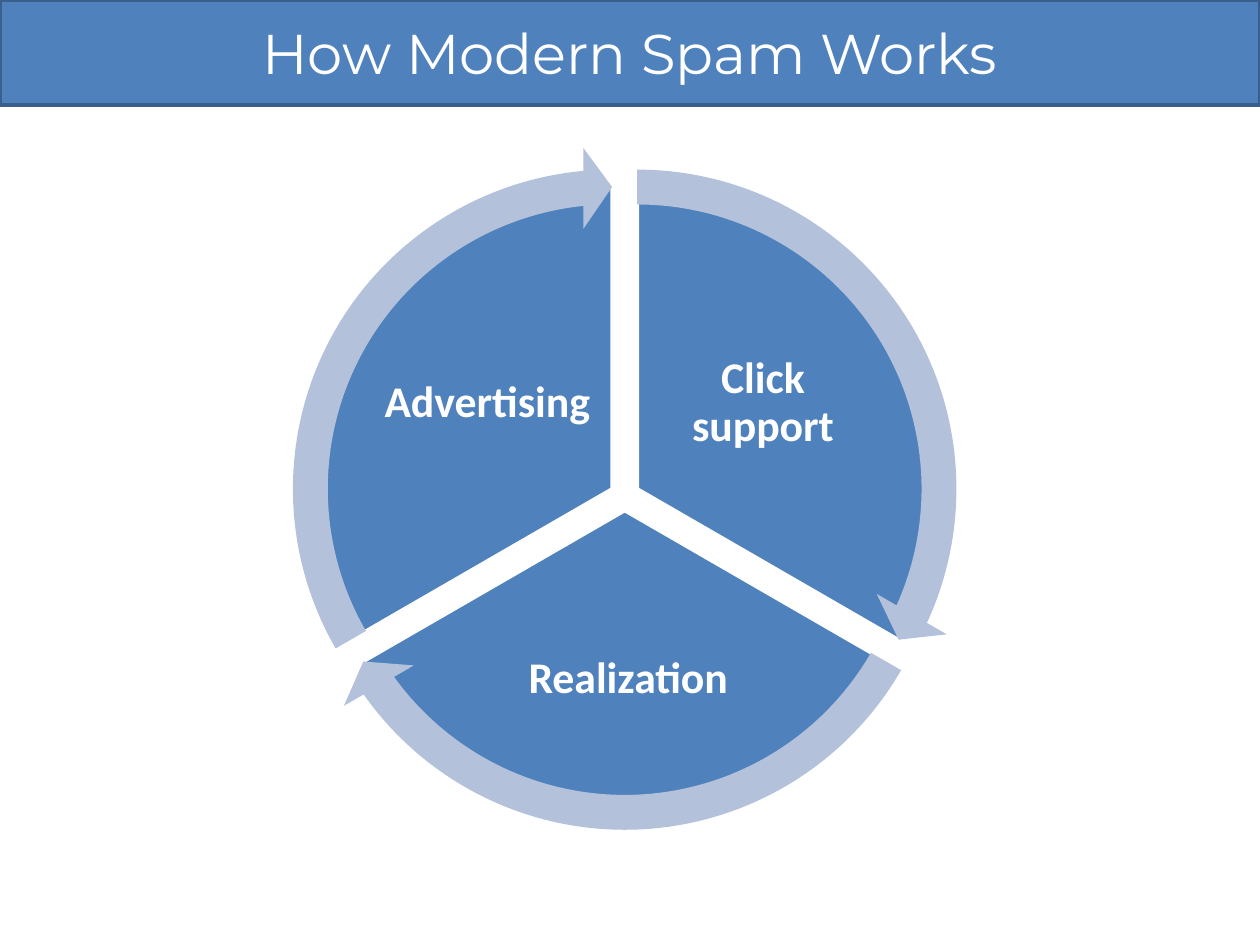
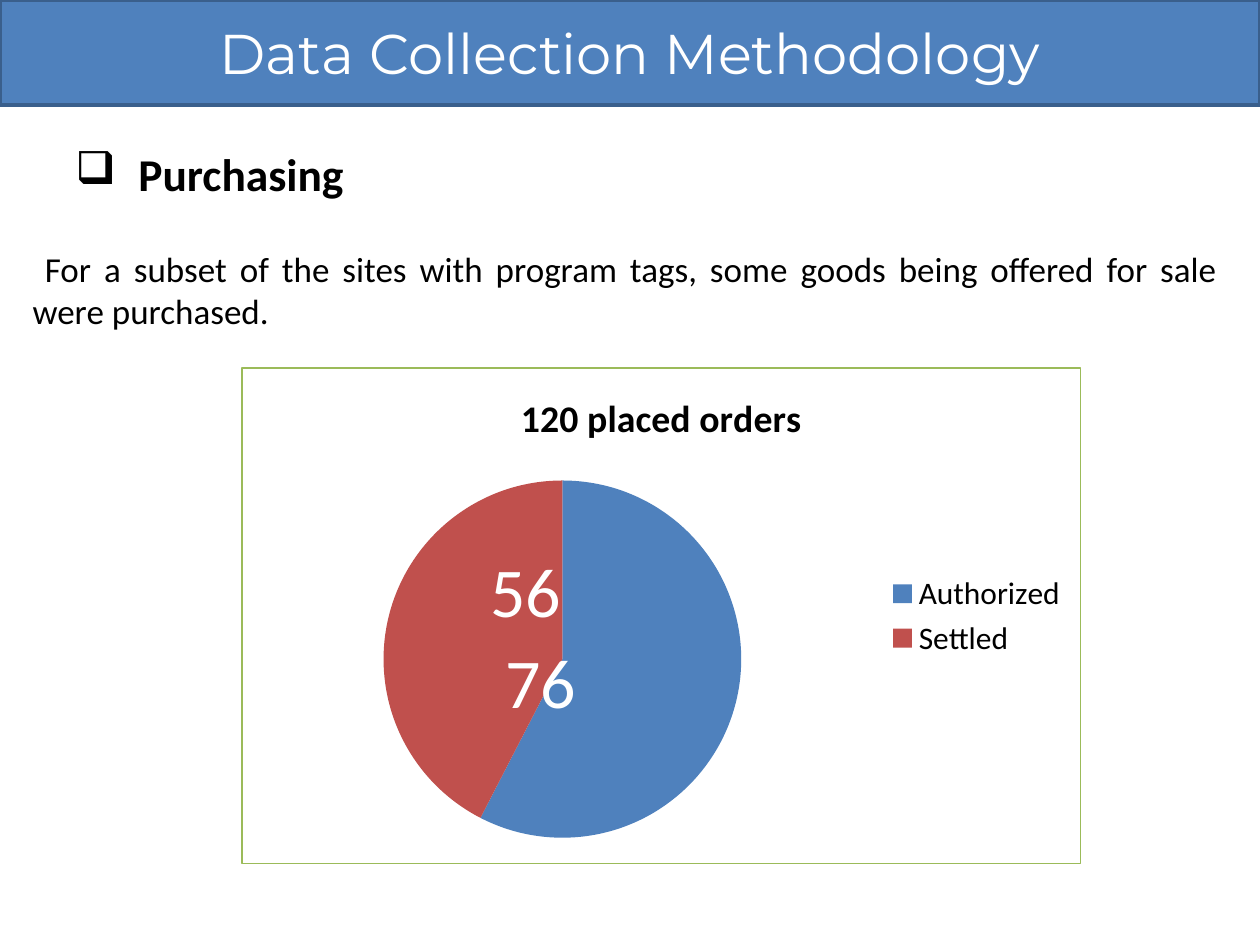
from math import cos, radians, sin

from lxml.etree import SubElement
from pptx import Presentation
from pptx.chart.data import CategoryChartData
from pptx.dml.color import RGBColor
from pptx.enum.chart import XL_CHART_TYPE as ChartType
from pptx.enum.chart import XL_LABEL_POSITION as LabelPosition
from pptx.enum.chart import XL_LEGEND_POSITION as LegendPosition
from pptx.enum.shapes import MSO_SHAPE as Preset
from pptx.enum.text import MSO_ANCHOR as Anchor
from pptx.enum.text import PP_ALIGN as Align
from pptx.oxml import parse_xml
from pptx.oxml.ns import nsdecls, qn
from pptx.util import Pt

BLUE = RGBColor(0x4F, 0x81, 0xBD)
DARK_BLUE = RGBColor(0x3A, 0x5F, 0x8C)
PALE_BLUE = RGBColor(0xB3, 0xC1, 0xDB)
RED = RGBColor(0xC0, 0x50, 0x4D)
GREEN = RGBColor(0x9B, 0xBB, 0x59)
WHITE = RGBColor(0xFF, 0xFF, 0xFF)
BLACK = RGBColor(0, 0, 0)

TITLE_FONT = "Montserrat"
BODY_FONT = "Calibri"
PAGE_WIDTH, PAGE_HEIGHT = 720, 540
BAND_HEIGHT = 60


def style_font(font, size, color, name=BODY_FONT, bold=False):
    font.size, font.name, font.bold = Pt(size), name, bold
    font.color.rgb = color


def add_filled(shapes, preset, box, fill, line=None):
    """Add a flat preset shape; box is (left, top, width, height) in points."""
    shape = shapes.add_shape(preset, *map(Pt, box))
    shape.shadow.inherit = False
    shape.fill.solid()
    shape.fill.fore_color.rgb = fill
    if line is None:
        shape.line.fill.background()
    else:
        shape.line.color.rgb = line
        shape.line.width = Pt(2)
    return shape


def add_text(shapes, box, text, size, color, align, anchor, bold=False):
    """Add a wrapped text box and return its frame and paragraph."""
    frame = shapes.add_textbox(*map(Pt, box)).text_frame
    frame.word_wrap = True
    frame.vertical_anchor = anchor
    para = frame.paragraphs[0]
    para.text, para.alignment = text, align
    style_font(para.font, size, color, bold=bold)
    return frame, para


def indent(para, margin, first_line):
    props = para._p.get_or_add_pPr()
    props.set("marL", str(Pt(margin)))
    props.set("indent", str(Pt(first_line)))
    return props


def add_page(deck, title):
    """Add a blank page with the title band."""
    page = deck.slides.add_slide(deck.slide_layouts[6])
    band = add_filled(page.shapes, Preset.RECTANGLE,
                      (0, 0, PAGE_WIDTH, BAND_HEIGHT), BLUE, DARK_BLUE)
    band.text_frame.vertical_anchor = Anchor.MIDDLE
    para = band.text_frame.paragraphs[0]
    para.text, para.alignment = title, Align.CENTER
    style_font(para.font, 32, WHITE, TITLE_FONT)
    return page


def square(center_x, center_y, side):
    return center_x - side / 2, center_y - side / 2, side, side


def set_adjustments(shape, values):
    for index, value in enumerate(values):
        shape.adjustments[index] = value


def draw_cycle(page, box):
    """Three wedges pushed apart, each with a label and an arrow round its rim."""
    left, top, wedge_side, _ = box
    arrow_side, push, unit = 391, 8.28, 0.6  # unit: adjustment value per degree
    steps = [  # label text and its box relative to the cycle
        ("Click support", (190.5, 69, 125, 104)),
        ("Realization", (82.5, 233, 187, 91)),
        ("Advertising", (33, 69, 125, 104)),
    ]
    shapes = page.shapes.add_group_shape().shapes
    arrows = []
    for index, (label, (x, y, width, height)) in enumerate(steps):
        start = (270 + 120 * index) % 360
        end = (start + 120) % 360
        middle = radians(start + 60)
        center = (left + wedge_side / 2 + push * cos(middle),
                  top + wedge_side / 2 + push * sin(middle))
        wedge = add_filled(shapes, Preset.PIE, square(*center, wedge_side),
                           BLUE, WHITE)
        set_adjustments(wedge, (start * unit, end * unit))
        frame, para = add_text(shapes, (left + x, top + y, width, height), label,
                               25, WHITE, Align.CENTER, Anchor.MIDDLE, bold=True)
        frame.margin_left = frame.margin_right = Pt(2.5)
        frame.margin_top = frame.margin_bottom = Pt(2.5)
        para.line_spacing = 0.9
        arrows.append((center, start, end))

    # Arrows lie above all wedges
    for center, start, end in arrows:
        arrow = add_filled(shapes, Preset.CIRCULAR_ARROW,
                           square(*center, arrow_side), PALE_BLUE)
        set_adjustments(arrow, (0.051, 3.275, end * unit - 3.275,
                                start * unit, 0.059))


def draw_purchasing_text(page, box):
    """Bulleted heading with a justified paragraph below it."""
    left, top, width, height = box
    _, heading = add_text(page.shapes, (left + 24.5, top, 648, 90), "Purchasing",
                          26, BLACK, Align.LEFT, Anchor.MIDDLE, bold=True)
    bullet = SubElement(indent(heading, 36, -36), qn("a:buChar"))
    bullet.set("char", "❑")
    _, body = add_text(
        page.shapes, (left, top + 84, width, height - 84),
        "For a subset of the sites with program tags, some goods being "
        "offered for sale were purchased.",
        20, BLACK, Align.JUSTIFY, Anchor.TOP)
    indent(body, 0, 7)


def frame_chart(chart):
    """Give the chart square corners and a thin border."""
    plot_root = chart.element.find(qn("c:chart"))
    plot_root.addprevious(parse_xml(
        f'<c:roundedCorners {nsdecls("c")} val="0"/>'))
    plot_root.addnext(parse_xml(
        f'<c:spPr {nsdecls("c", "a")}><a:ln w="{Pt(0.75)}"><a:solidFill>'
        f'<a:srgbClr val="{GREEN}"/></a:solidFill></a:ln></c:spPr>'))


def draw_orders_chart(page, box):
    """Pie of authorized and settled orders."""
    data = CategoryChartData()
    data.categories = ["Authorized", "Settled"]
    data.add_series("Series 1", (76, 56))
    chart = page.shapes.add_chart(ChartType.PIE, *map(Pt, box), data).chart
    style_font(chart.font, 18, BLACK)
    frame_chart(chart)

    chart.has_title = True
    title = chart.chart_title.text_frame.paragraphs[0]
    title.text = "120 placed orders"
    style_font(title.font, 21.6, BLACK, bold=True)
    chart.has_legend = True
    chart.legend.position = LegendPosition.RIGHT
    chart.legend.include_in_layout = False

    # Slices, with labels shifted by a share of the chart size
    plot = chart.plots[0]
    plot.vary_by_categories = True
    shifts = [(-0.13, 0.01), (0.06, -0.09)]
    for index, color in enumerate((BLUE, RED)):
        point = plot.series[0].points[index]
        point.format.fill.solid()
        point.format.fill.fore_color.rgb = color
        style_font(point.data_label.font, 40, WHITE)
        point.data_label.position = LabelPosition.CENTER
    for label, (x, y) in zip(chart.element.xpath(".//c:dLbl"), shifts):
        label.find(qn("c:idx")).addnext(parse_xml(
            f'<c:layout {nsdecls("c")}><c:manualLayout>'
            f'<c:x val="{x}"/><c:y val="{y}"/></c:manualLayout></c:layout>'))


def main():
    deck = Presentation()
    deck.slide_width, deck.slide_height = Pt(PAGE_WIDTH), Pt(PAGE_HEIGHT)

    page = add_page(deck, "How Modern Spam Works")
    draw_cycle(page, (183, 109.5, 348, 348))

    page = add_page(deck, "Data Collection Methodology")
    draw_purchasing_text(page, (11.5, 54, 691, 410))
    draw_orders_chart(page, (138, 210, 480, 284))

    deck.save("out.pptx")


if __name__ == "__main__":
    main()
